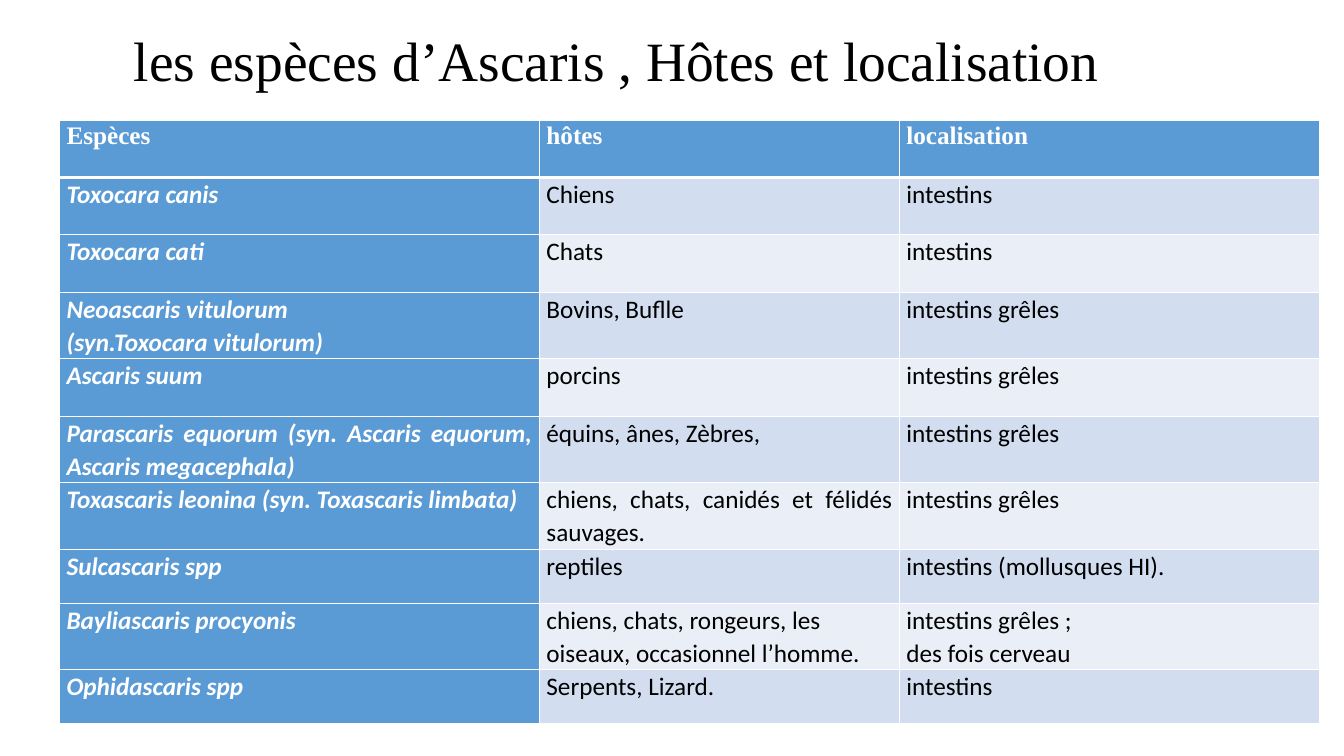
from lxml import etree
from pptx import Presentation
from pptx.dml.color import RGBColor
from pptx.enum.text import MSO_ANCHOR, PP_ALIGN
from pptx.oxml.ns import qn
from pptx.util import Inches, Pt

LEFT, JUSTIFY = PP_ALIGN.LEFT, PP_ALIGN.JUSTIFY
MIDDLE = MSO_ANCHOR.MIDDLE
COLORS = {
    "white": "FFFFFF",
    "black": "000000",
    "blue": "5B9BD5",
    "dark_band": "D2DEEF",
    "light_band": "EAEFF7",
}
HEADING_FONT, BODY_FONT = "Times New Roman", "Calibri"

COLUMN_WIDTHS = [4.76, 3.57, 4.17]
ROW_HEIGHTS = [0.57, 0.57, 0.57, 0.66, 0.57, 0.66, 0.66, 0.54, 0.65, 0.54]
SPECIES_ROWS = [
    ["Espèces", "hôtes", "localisation"],
    ["Toxocara canis", "Chiens", "intestins"],
    ["Toxocara cati", "Chats", "intestins"],
    ["Neoascaris vitulorum\n(syn.Toxocara vitulorum)", "Bovins, Buflle", "intestins grêles"],
    ["Ascaris suum", "porcins", "intestins grêles"],
    ["Parascaris equorum (syn. Ascaris equorum, Ascaris megacephala)",
     "équins, ânes, Zèbres,", "intestins grêles"],
    ["Toxascaris leonina (syn. Toxascaris limbata)",
     "chiens, chats, canidés et félidés sauvages.", "intestins grêles"],
    ["Sulcascaris spp", "reptiles", "intestins (mollusques HI)."],
    ["Bayliascaris procyonis",
     "chiens, chats, rongeurs, les oiseaux, occasionnel l’homme.",
     "intestins grêles ;\ndes fois cerveau"],
    ["Ophidascaris spp", "Serpents, Lizard.", "intestins"],
]
LEFT_ALIGNED_CELLS = {(8, 1), (9, 1)}


def add_run(paragraph, text, font_name, size, color):
    run = paragraph.add_run()
    run.text = text
    run.font.name = font_name
    run.font.size = Pt(size)
    run.font.color.rgb = RGBColor.from_string(COLORS[color])
    return run


def set_borders(cell, top_width, bottom_width):
    """Draw white borders; must run before the cell's fill is set."""
    properties = cell._tc.get_or_add_tcPr()
    widths = {"a:lnL": 1, "a:lnR": 1, "a:lnT": top_width, "a:lnB": bottom_width}
    for tag, width in widths.items():
        line = etree.SubElement(properties, qn(tag), w=str(Pt(width)))
        fill = etree.SubElement(line, qn("a:solidFill"))
        etree.SubElement(fill, qn("a:srgbClr"), val=COLORS["white"])


presentation = Presentation()
presentation.slide_width = Inches(13.33)
presentation.slide_height = Inches(7.5)
slide = presentation.slides.add_slide(presentation.slide_layouts[6])

# Species table
table = slide.shapes.add_table(
    len(SPECIES_ROWS), len(COLUMN_WIDTHS), Inches(0.59), Inches(1.19),
    Inches(sum(COLUMN_WIDTHS)), Inches(sum(ROW_HEIGHTS))
).table
table.first_col = True
for column, width in zip(table.columns, COLUMN_WIDTHS):
    column.width = Inches(width)
for row, height in zip(table.rows, ROW_HEIGHTS):
    row.height = Inches(height)

for row_index, texts in enumerate(SPECIES_ROWS):
    is_header = row_index == 0
    band = "dark_band" if row_index % 2 else "light_band"
    for column_index, text in enumerate(texts):
        is_species = column_index == 0 and not is_header
        is_blue = is_header or is_species
        cell = table.cell(row_index, column_index)
        cell.margin_left = cell.margin_right = Inches(0.07)
        cell.margin_top = cell.margin_bottom = 0
        set_borders(cell, 3 if row_index == 1 else 1, 3 if is_header else 1)
        cell.fill.solid()
        cell.fill.fore_color.rgb = RGBColor.from_string(COLORS["blue" if is_blue else band])

        for line_index, line_text in enumerate(text.split("\n")):
            text_frame = cell.text_frame
            paragraph = text_frame.add_paragraph() if line_index else text_frame.paragraphs[0]
            is_left = (row_index, column_index) in LEFT_ALIGNED_CELLS
            paragraph.alignment = LEFT if is_left else JUSTIFY
            paragraph.line_spacing = 1.07
            run = add_run(paragraph, line_text, HEADING_FONT if is_header else BODY_FONT,
                          18, "white" if is_blue else "black")
            run.font.bold = is_blue
            run.font.italic = is_species

# Title
title = slide.shapes.add_textbox(Inches(1.23), Inches(0.17), Inches(10.28), Inches(0.92))
title.text_frame.word_wrap = True
title.text_frame.vertical_anchor = MIDDLE
title_paragraph = title.text_frame.paragraphs[0]
title_paragraph.line_spacing = 0.9
add_run(title_paragraph, "les espèces d’Ascaris , Hôtes et localisation",
        HEADING_FONT, 39.6, "black")

presentation.save("out.pptx")
